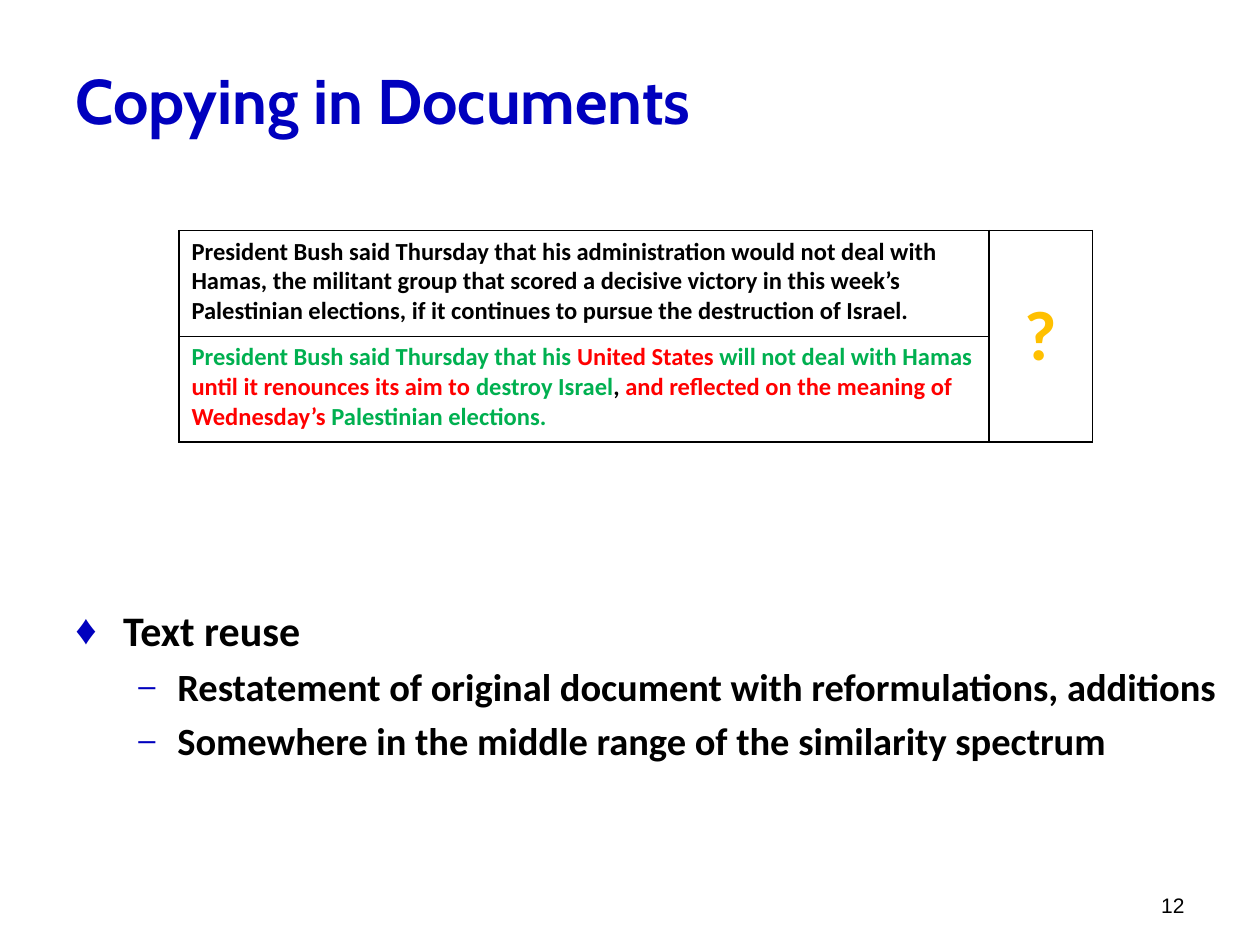
from dataclasses import dataclass

from lxml import etree
from pptx import Presentation
from pptx.dml.color import RGBColor
from pptx.enum import text as t
from pptx.oxml import ns
from pptx.util import Inches, Pt


@dataclass(frozen=True)
class Theme:
    blue: str = "0000BE"
    black: str = "000000"
    green: str = "00B050"
    red: str = "FF0000"
    gold: str = "FFC000"
    head: str = "Cabin"
    body: str = "Calibri"
    plain: str = "Arial"
    title: int = 36
    mark: int = 40
    point: int = 24
    sub: int = 22
    cell: int = 14
    page: int = 12


TH = Theme()

FIRST = [("President Bush said Thursday that his administration would not "
          "deal with Hamas, the militant group that scored a decisive victory "
          "in this week’s Palestinian elections, if it continues to pursue "
          "the destruction of Israel.", TH.black)]
# Green words are reused, red words are new
REUSE = [("President Bush said Thursday that his ", TH.green),
         ("United States ", TH.red),
         ("will not deal with Hamas ", TH.green),
         ("until it renounces its aim to ", TH.red),
         ("destroy Israel", TH.green),
         (", ", TH.black),
         ("and reflected on the meaning of Wednesday’s ", TH.red),
         ("Palestinian elections.", TH.green)]
POINTS = [(0, "Text reuse"),
          (1, "Restatement of original document with reformulations, additions"),
          (1, "Somewhere in the middle range of the similarity spectrum")]
# Per level: size, left margin, hanging indent, bullet, bullet percent
LEVELS = [(TH.point, 0.38, -0.38, "♦", 100),
          (TH.sub, 0.81, -0.31, "–", 80)]


def style(font, size, name=TH.body, color=TH.black, bold=True):
    font.size, font.name, font.bold = Pt(size), name, bold
    font.color.rgb = RGBColor.from_string(color)


def place(shape, x, y, w, h):
    shape.left, shape.top = Inches(x), Inches(y)
    shape.width, shape.height = Inches(w), Inches(h)


def add_node(parent, tag, **attrs):
    return etree.SubElement(parent, ns.qn(tag), attrs)


def add_title(slide, words):
    title = slide.shapes.title
    place(title, 0.5, 0.33, 9.5, 0.92)
    frame = title.text_frame
    frame.text = words
    frame.vertical_anchor = t.MSO_ANCHOR.MIDDLE
    para = frame.paragraphs[0]
    para.alignment = t.PP_ALIGN.LEFT
    style(para.font, TH.title, TH.head, TH.blue)


def add_box(slide, x, y, w, h):
    box = slide.shapes.add_textbox(Inches(x), Inches(y), Inches(w), Inches(h))
    box.text_frame.word_wrap = True
    return box.text_frame


def add_page(slide, number):
    frame = add_box(slide, 7.17, 6.83, 2.33, 0.5)
    frame.vertical_anchor = t.MSO_ANCHOR.BOTTOM
    para = frame.paragraphs[0]
    para.text, para.alignment = number, t.PP_ALIGN.RIGHT
    style(para.font, TH.page, TH.plain, bold=False)


def add_border(cell):
    props = cell._tc.get_or_add_tcPr()
    # Lines go ahead of the fill, in schema order
    for spot, side in enumerate(("a:lnL", "a:lnR", "a:lnT", "a:lnB")):
        line = etree.Element(ns.qn(side), w=str(Pt(1)))
        add_node(add_node(line, "a:solidFill"), "a:srgbClr", val=TH.black)
        props.insert(spot, line)


def fill_cell(cell, parts, size):
    para = cell.text_frame.paragraphs[0]
    for words, color in parts:
        run = para.add_run()
        run.text = words
        style(run.font, size, color=color)
    return para


def add_grid(slide):
    grid = slide.shapes.add_table(2, 2, Inches(1.42), Inches(1.83),
                                  Inches(7.25), Inches(1.68)).table
    for col, width in zip(grid.columns, (6.43, 0.82)):
        col.width = Inches(width)
    for cell in grid.iter_cells():
        cell.fill.background()
        add_border(cell)
    for row, parts in enumerate((FIRST, REUSE)):
        fill_cell(grid.cell(row, 0), parts, TH.cell)
    # Verdict spans both texts
    mark = grid.cell(0, 1)
    mark.merge(grid.cell(1, 1))
    mark.vertical_anchor = t.MSO_ANCHOR.MIDDLE
    para = fill_cell(mark, [("?", TH.gold)], TH.mark)
    para.alignment = t.PP_ALIGN.CENTER


def add_points(slide):
    frame = add_box(slide, 0.5, 4.75, 9.5, 2.33)
    for i, (level, words) in enumerate(POINTS):
        para = frame.add_paragraph() if i else frame.paragraphs[0]
        size, margin, indent, sign, percent = LEVELS[level]
        para.text, para.level = words, level
        props = para._p.get_or_add_pPr()
        props.set("marL", str(Inches(margin)))
        props.set("indent", str(Inches(indent)))
        add_node(add_node(props, "a:buClr"), "a:srgbClr", val=TH.blue)
        add_node(props, "a:buSzPct", val=str(percent * 1000))
        add_node(props, "a:buFont", typeface=TH.plain)
        add_node(props, "a:buChar", char=sign)
        para.space_before = Pt(size * 0.2)
        style(para.font, size)


def main():
    deck = Presentation()
    deck.slide_width, deck.slide_height = Inches(10), Inches(7.5)
    slide = deck.slides.add_slide(deck.slide_layouts[5])
    add_title(slide, "Copying in Documents")
    add_page(slide, "12")
    add_grid(slide)
    add_points(slide)
    deck.save("out.pptx")


if __name__ == "__main__":
    main()
